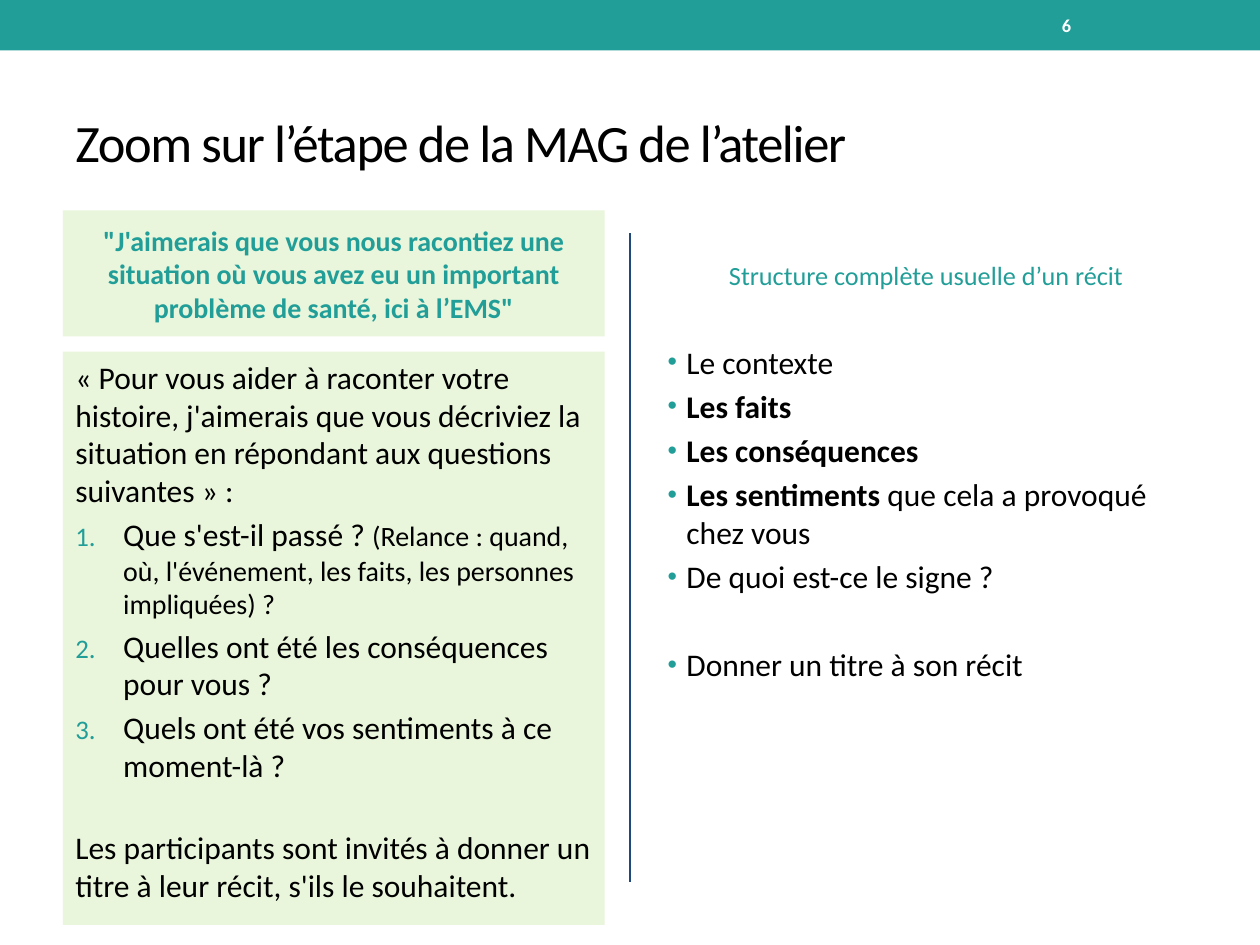
"""Build the slide on the MAG step of the workshop."""
from lxml import etree
from pptx import Presentation
from pptx.dml.color import RGBColor
from pptx.enum import shapes, text
from pptx.oxml import ns
from pptx.util import Inches, Pt

TEAL = RGBColor(0x22, 0x9E, 0x98)
PALE_GREEN = RGBColor(0xE9, 0xF6, 0xDC)
NAVY = RGBColor(0x1F, 0x49, 0x7D)
BLACK = RGBColor(0, 0, 0)
WHITE = RGBColor(0xFF, 0xFF, 0xFF)
LEFT, CENTER = text.PP_ALIGN.LEFT, text.PP_ALIGN.CENTER
TOP, MIDDLE = text.MSO_ANCHOR.TOP, text.MSO_ANCHOR.MIDDLE


def add_text(box, paragraphs, color=BLACK, align=LEFT, anchor=MIDDLE):
    """Fill a box with (space before, bullet, indent, runs) paragraphs."""
    frame = box.text_frame
    frame.word_wrap = True
    frame.vertical_anchor = anchor
    for i, (space, bullet, indent, runs) in enumerate(paragraphs):
        paragraph = frame.add_paragraph() if i else frame.paragraphs[0]
        paragraph.alignment = align
        paragraph.space_before = Pt(space)
        if bullet:
            add_bullet(paragraph, bullet, indent)
        for words, size, bold in runs:
            run = paragraph.add_run()
            run.text = words
            run.font.name = "Calibri"
            run.font.size = Pt(size)
            run.font.bold = bold
            run.font.color.rgb = color


def add_bullet(paragraph, bullet, indent):
    """Give a paragraph a teal bullet or number with a hanging indent."""
    props = paragraph._p.get_or_add_pPr()
    props.set("marL", str(Inches(indent)))
    props.set("indent", str(-Inches(indent)))
    tint = etree.SubElement(props, ns.qn("a:buClr"))
    etree.SubElement(tint, ns.qn("a:srgbClr"), val=str(TEAL))
    etree.SubElement(props, ns.qn("a:buSzPct"), val="85000")
    if bullet == "•":
        etree.SubElement(props, ns.qn("a:buFont"), typeface="Arial")
        etree.SubElement(props, ns.qn("a:buChar"), char=bullet)
    else:
        etree.SubElement(props, ns.qn("a:buFont"), typeface="+mj-lt")
        etree.SubElement(props, ns.qn("a:buAutoNum"), type=bullet)


prs = Presentation()
prs.slide_width, prs.slide_height = Inches(10), Inches(7.5)
slide = prs.slides.add_slide(prs.slide_layouts[6])

panels = []
for left, top, width, height, color in [
    (0, 0, 10, 0.4, TEAL),
    (0.5, 1.67, 4.3, 1, PALE_GREEN),
    (0.5, 2.79, 4.3, 4.55, PALE_GREEN),
]:
    panel = slide.shapes.add_shape(
        shapes.MSO_SHAPE.RECTANGLE, Inches(left), Inches(top), Inches(width), Inches(height))
    panel.shadow.inherit = False
    panel.fill.solid()
    panel.fill.fore_color.rgb = color
    panel.line.fill.background()
    panels.append(panel)
banner, prompt, questions = panels

divider = slide.shapes.add_connector(
    shapes.MSO_CONNECTOR.STRAIGHT, Inches(5), Inches(1.85), Inches(5), Inches(7))
divider.line.color.rgb = NAVY
divider.line.width = Pt(1.5)
etree.SubElement(divider._element.spPr, ns.qn("a:effectLst"))

title, structure, story_parts, page_number = [
    slide.shapes.add_textbox(Inches(left), Inches(top), Inches(width), Inches(height))
    for left, top, width, height in [
        (0.5, 0.58, 9, 1.08),
        (5.2, 1.83, 4.3, 0.7),
        (5.2, 2.67, 4.3, 4.32),
        (8.33, 0.02, 1.17, 0.36),
    ]
]

add_text(title, [(0, None, 0, [("Zoom sur l’étape de la MAG de l’atelier", 30, False)])])
for run in title.text_frame.paragraphs[0].runs:
    run.font._element.set("spc", "-80")

add_text(prompt, [(3.2, None, 0, [(
    "\"J'aimerais que vous nous racontiez une situation où vous avez eu "
    "un important problème de santé, ici à l’EMS\"", 16, True)])], TEAL, CENTER)

NUMBER = "arabicPeriod"
add_text(questions, [
    (3.6, None, 0, [(
        "« Pour vous aider à raconter votre histoire, j'aimerais que vous décriviez "
        "la situation en répondant aux questions suivantes » :", 18, False)]),
    (3.6, NUMBER, 0.38, [
        ("Que s'est-il passé ? ", 18, False),
        ("(Relance : quand, où, l'événement, les faits, les personnes impliquées) ?", 16, False)]),
    (3.6, NUMBER, 0.38, [("Quelles ont été les conséquences pour vous ?", 18, False)]),
    (3.6, NUMBER, 0.38, [("Quels ont été vos sentiments à ce moment-là ?", 18, False)]),
    (25, None, 0, [(
        "Les participants sont invités à donner un titre à leur récit, "
        "s'ils le souhaitent.", 18, False)]),
], anchor=TOP)

add_text(structure, [(3, None, 0, [("Structure complète usuelle d’un récit", 15, False)])],
         TEAL, CENTER)

add_text(story_parts, [
    (space, "•", 0.15, [(words, 18, bold) for words, bold in runs])
    for space, runs in [
        (3.6, [("Le contexte", False)]),
        (3.6, [("Les faits", True)]),
        (3.6, [("Les conséquences", True)]),
        (3.6, [("Les sentiments", True), (" que cela a provoqué chez vous", False)]),
        (3.6, [("De quoi est-ce le signe ?", False)]),
        (29, [("Donner un titre à son récit", False)]),
    ]
], anchor=TOP)

add_text(page_number, [(0, None, 0, [("6", 10.5, True)])], WHITE)

prs.save("out.pptx")
